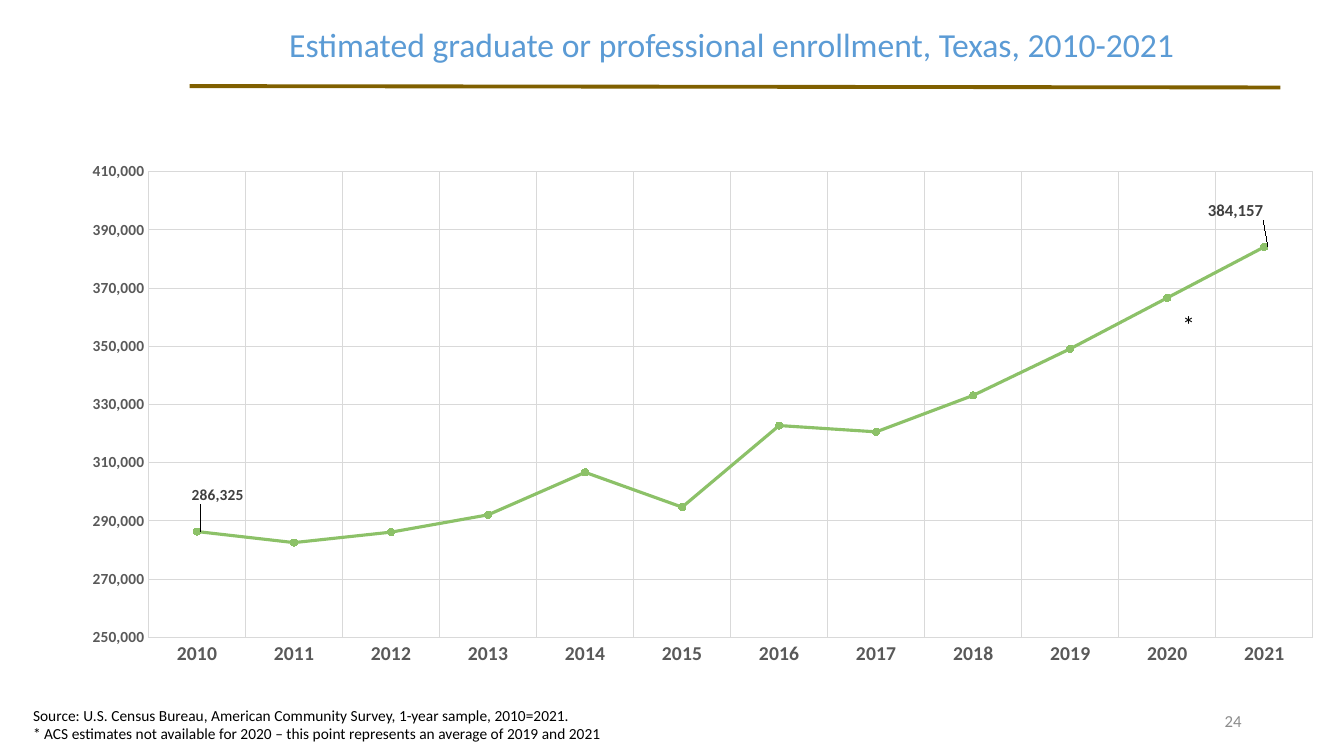
from lxml import etree
from pptx import Presentation
from pptx.chart.data import CategoryChartData
from pptx.dml.color import RGBColor
from pptx.enum.chart import XL_CHART_TYPE, XL_LABEL_POSITION, XL_MARKER_STYLE, XL_TICK_MARK
from pptx.enum.shapes import MSO_CONNECTOR
from pptx.enum.text import MSO_ANCHOR, PP_ALIGN
from pptx.oxml import parse_xml
from pptx.oxml.ns import nsdecls, qn
from pptx.util import Pt

FONT = "Calibri"
COLORS = {
    "title": "5B9BD5", "rule": "806000", "text": "000000", "page": "8C8C8C",
    "axis": "595959", "grid": "D9D9D9", "series": "8CC168", "label": "404040",
}
ENROLLMENT = {
    2010: 286325, 2011: 282528, 2012: 286125, 2013: 292064,
    2014: 306680, 2015: 294710, 2016: 322757, 2017: 320584,
    2018: 333138, 2019: 349160, 2020: 366658.5, 2021: 384157,
}


def color(name):
    return RGBColor.from_string(COLORS[name])


def style_font(font, size, color_name, bold=False):
    font.name, font.size, font.bold = FONT, Pt(size), bold
    font.color.rgb = color(color_name)


def style_line(line, color_name, width):
    line.color.rgb = color(color_name)
    line.width = Pt(width)


def add_text(slide, box, lines, size, color_name, align=PP_ALIGN.LEFT,
             anchor=MSO_ANCHOR.TOP, spacing=None, wrap=True):
    frame = slide.shapes.add_textbox(*map(Pt, box)).text_frame
    frame.word_wrap = wrap
    frame.vertical_anchor = anchor
    for index, line in enumerate(lines):
        paragraph = frame.add_paragraph() if index else frame.paragraphs[0]
        paragraph.alignment = align
        if spacing:
            paragraph.line_spacing = Pt(spacing)
        run = paragraph.add_run()
        run.text = line
        style_font(run.font, size, color_name)


def add_rule(slide, start, end):
    rule = slide.shapes.add_connector(MSO_CONNECTOR.STRAIGHT, *map(Pt, start + end))
    style_line(rule.line, "rule", 2.75)
    etree.SubElement(rule._element.spPr, qn("a:effectLst"))


def manual_layout(**values):
    items = "".join(f'<c:{tag} val="{value}"/>' for tag, value in values.items())
    return parse_xml(f'<c:layout {nsdecls("c")}><c:manualLayout>{items}'
                     '</c:manualLayout></c:layout>')


def style_axis(axis, size):
    axis.major_tick_mark = axis.minor_tick_mark = XL_TICK_MARK.NONE
    axis.has_major_gridlines = True
    style_line(axis.major_gridlines.format.line, "grid", 0.75)
    style_font(axis.tick_labels.font, size, "axis", bold=True)


def label_point(series, index, size, shift_x, shift_y):
    label = series.points[index].data_label
    style_font(label.font, size, "label", bold=True)
    label.position = XL_LABEL_POSITION.RIGHT
    # Move the label away from its point
    element = series.data_labels._element.findall(qn("c:dLbl"))[-1]
    for old in element.findall(qn("c:layout")):
        element.remove(old)
    element.find(qn("c:idx")).addnext(manual_layout(x=shift_x, y=shift_y))


def add_leader_lines(labels):
    namespace = "http://schemas.microsoft.com/office/drawing/2012/chart"
    labels._element.append(parse_xml(
        f'<c:extLst {nsdecls("c", "a")}>'
        f'<c:ext uri="{{CE6537A1-D6FC-4f65-9D91-7224C49458BB}}" xmlns:c15="{namespace}">'
        '<c15:showLeaderLines val="1"/><c15:leaderLines><c:spPr><a:ln w="9525">'
        f'<a:solidFill><a:srgbClr val="{COLORS["text"]}"/></a:solidFill></a:ln></c:spPr>'
        '</c15:leaderLines></c:ext></c:extLst>'))


def add_enrollment_chart(slide, box):
    data = CategoryChartData(number_format="#,##0")
    data.categories = [str(year) for year in ENROLLMENT]
    data.add_series("Series 1", ENROLLMENT.values())
    chart = slide.shapes.add_chart(XL_CHART_TYPE.LINE_MARKERS, *map(Pt, box), data).chart
    chart.has_legend = chart.has_title = False
    style_font(chart.font, 10, "text")
    plot = chart.plots[0]
    plot.vary_by_categories = False

    # Fixed plot area
    plot_area = chart._chartSpace.chart.plotArea
    for old in plot_area.findall(qn("c:layout")):
        plot_area.remove(old)
    plot_area.insert(0, manual_layout(layoutTarget="inner", xMode="edge", yMode="edge",
                                      x=0.069, y=0.038, w=0.91, h=0.888))

    # Axes
    style_axis(chart.category_axis, 14)
    style_line(chart.category_axis.format.line, "grid", 0.75)
    values = chart.value_axis
    style_axis(values, 11)
    values.format.line.fill.background()
    values.minimum_scale, values.maximum_scale, values.major_unit = 250000, 410000, 20000
    values.tick_labels.number_format = "#,##0"
    values.tick_labels.number_format_is_linked = False

    # Line and markers
    series = plot.series[0]
    series.smooth = False
    style_line(series.format.line, "series", 2.25)
    series.marker.style, series.marker.size = XL_MARKER_STYLE.CIRCLE, 5
    series.marker.format.fill.solid()
    series.marker.format.fill.fore_color.rgb = color("series")
    style_line(series.marker.format.line, "series", 0.75)

    # Labels on the first and last years
    series.data_labels.show_value = False
    label_point(series, 0, 11, -0.01, -0.07)
    label_point(series, len(ENROLLMENT) - 1, 12, -0.05, -0.07)
    add_leader_lines(series.data_labels)


def main():
    presentation = Presentation()
    presentation.slide_width, presentation.slide_height = Pt(960), Pt(540)
    slide = presentation.slides.add_slide(presentation.slide_layouts[6])

    # Heading
    add_rule(slide, (135.5, 61.5), (914.5, 62.5))
    add_text(slide, (199.5, 24, 702, 27),
             ["Estimated graduate or professional enrollment, Texas, 2010-2021"],
             24, "title", spacing=18)

    # Chart and its footnote mark
    add_enrollment_chart(slide, (43, 108.5, 914, 374.5))
    add_text(slide, (837.5, 217.5, 45, 17), ["*"], 18, "text")

    # Footer
    add_text(slide, (16.5, 500.5, 430.5, 34), [
        "Source: U.S. Census Bureau, American Community Survey, 1-year sample, 2010=2021.",
        "* ACS estimates not available for 2020 – this point represents an average of 2019 and 2021",
    ], 11, "text", wrap=False)
    add_text(slide, (678, 500.5, 216, 29), ["24"], 12, "page",
             align=PP_ALIGN.RIGHT, anchor=MSO_ANCHOR.MIDDLE)

    presentation.save("out.pptx")


if __name__ == "__main__":
    main()
